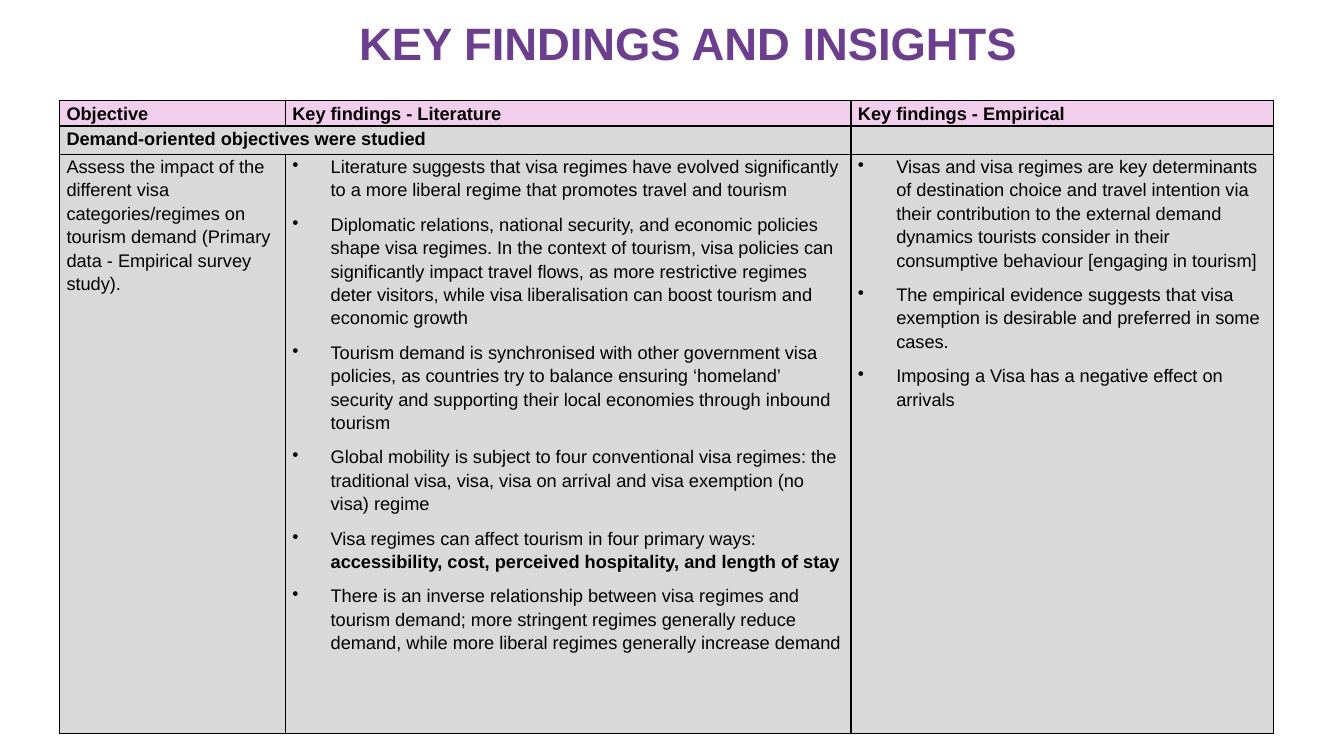
import dataclasses
import typing

import pptx
import pptx.dml.color
import pptx.enum.text
import pptx.oxml
import pptx.oxml.ns
import pptx.util

Inches = pptx.util.Inches
Pt = pptx.util.Pt


@dataclasses.dataclass(frozen=True)
class Theme:
    font: str = "Arial"
    title_color: str = "6C3D91"
    text_color: str = "000000"
    border_color: str = "000000"
    header_fill: str = "F2CEED"
    body_fill: str = "D9D9D9"
    title_size: float = 32.4
    table_size: float = 13
    border_width: float = 1


@dataclasses.dataclass(frozen=True)
class Span:
    text: str
    bold: bool = False


@dataclasses.dataclass(frozen=True)
class CellContent:
    paragraphs: tuple[tuple[Span, ...], ...] = ()
    fill: str = Theme.body_fill
    bulleted: bool = False


THEME = Theme()
COLUMN_WIDTHS = (2.24, 5.61, 4.19)
ROW_HEIGHTS = (0.24, 0.28, 5.75)
HANGING_INDENT = Inches(0.38)
CELL_FORMAT = {
    "margin_left": Inches(0.07),
    "margin_right": Inches(0.07),
    "margin_top": 0,
    "margin_bottom": 0,
}
PARAGRAPH_FORMAT = {"line_spacing": 1.15, "space_after": Pt(8)}


def heading(text: str, fill: str) -> CellContent:
    return CellContent(((Span(text, True),),), fill)


LITERATURE = (
    (Span("Literature suggests that visa regimes have evolved significantly to a more "
          "liberal regime that promotes travel and tourism"),),
    (Span("Diplomatic relations, national security, and economic policies shape visa "
          "regimes. In the context of tourism, visa policies can significantly impact "
          "travel flows, as more restrictive regimes deter visitors, while visa "
          "liberalisation can boost tourism and economic growth"),),
    (Span("Tourism demand is synchronised with other government visa policies, as "
          "countries try to balance ensuring ‘homeland’ security and supporting their "
          "local economies through inbound tourism"),),
    (Span("Global mobility is subject to four conventional visa regimes: the traditional "
          "visa, visa, visa on arrival and visa exemption (no visa) regime"),),
    (Span("Visa regimes can affect tourism in four primary ways: "),
     Span("accessibility, cost, perceived hospitality, and length of stay", True)),
    (Span("There is an inverse relationship between visa regimes and tourism demand; more "
          "stringent regimes generally reduce demand, while more liberal regimes "
          "generally increase demand"),),
)
EMPIRICAL = (
    (Span("Visas and visa regimes are key determinants of destination choice and travel "
          "intention via their contribution to the external demand dynamics tourists "
          "consider in their consumptive behaviour [engaging in tourism]"),),
    (Span("The empirical evidence suggests that visa exemption is desirable and preferred "
          "in some cases."),),
    (Span("Imposing a Visa has a negative effect on arrivals"),),
)
OBJECTIVE = (
    (Span("Assess the impact of the different visa categories/regimes on tourism demand "
          "(Primary data - Empirical survey study)."),),
)
ROWS = (
    tuple(heading(text, THEME.header_fill) for text in (
        "Objective", "Key findings - Literature", "Key findings - Empirical")),
    (heading("Demand-oriented objectives were studied", THEME.body_fill),
     CellContent(), CellContent()),
    (CellContent(OBJECTIVE), CellContent(LITERATURE, bulleted=True),
     CellContent(EMPIRICAL, bulleted=True)),
)


def apply_format(target: typing.Any, values: dict[str, typing.Any]) -> None:
    for name, value in values.items():
        setattr(target, name, value)


def add_span(para: typing.Any, span: Span, size: float, color: str) -> None:
    run = para.add_run()
    run.text = span.text
    apply_format(run.font, {"name": THEME.font, "size": Pt(size), "bold": span.bold})
    run.font.color.rgb = pptx.dml.color.RGBColor.from_string(color)


def add_bullet(para: typing.Any) -> None:
    properties = para._p.get_or_add_pPr()
    properties.set("marL", str(HANGING_INDENT))
    properties.set("indent", str(-HANGING_INDENT))
    bullet = pptx.oxml.parse_xml(
        f'<a:buChar {pptx.oxml.ns.nsdecls("a")} char="•"/>')
    properties.append(bullet)


def add_borders(cell: typing.Any) -> None:
    properties = cell._tc.get_or_add_tcPr()
    for side in ("lnL", "lnR", "lnT", "lnB"):
        properties.append(pptx.oxml.parse_xml(
            f'<a:{side} {pptx.oxml.ns.nsdecls("a")} w="{Pt(THEME.border_width)}">'
            f'<a:solidFill><a:srgbClr val="{THEME.border_color}"/></a:solidFill>'
            f'</a:{side}>'))


def fill_cell(cell: typing.Any, content: CellContent) -> None:
    apply_format(cell, CELL_FORMAT)
    add_borders(cell)
    cell.fill.solid()
    cell.fill.fore_color.rgb = pptx.dml.color.RGBColor.from_string(content.fill)
    frame = cell.text_frame
    if not content.paragraphs:
        frame.paragraphs[0]._p.append(pptx.oxml.parse_xml(
            f'<a:endParaRPr {pptx.oxml.ns.nsdecls("a")} '
            f'sz="{int(THEME.table_size * 100)}"/>'))
    for index, spans in enumerate(content.paragraphs):
        para = frame.add_paragraph() if index else frame.paragraphs[0]
        if content.bulleted:
            add_bullet(para)
        apply_format(para, PARAGRAPH_FORMAT)
        for span in spans:
            add_span(para, span, THEME.table_size, THEME.text_color)


def add_title(page: typing.Any, text: str) -> None:
    box = page.shapes.add_textbox(Inches(1.69), Inches(0.19), Inches(10.27), Inches(0.53))
    apply_format(box.text_frame, {
        "word_wrap": True,
        "vertical_anchor": pptx.enum.text.MSO_ANCHOR.MIDDLE,
    })
    para = box.text_frame.paragraphs[0]
    apply_format(para, {
        "alignment": pptx.enum.text.PP_ALIGN.CENTER,
        "line_spacing": 0.9,
    })
    add_span(para, Span(text, True), THEME.title_size, THEME.title_color)


def add_findings(page: typing.Any) -> None:
    table = page.shapes.add_table(
        len(ROWS), len(COLUMN_WIDTHS), Inches(0.59), Inches(1),
        Inches(sum(COLUMN_WIDTHS)), Inches(sum(ROW_HEIGHTS))).table
    apply_format(table, {"first_row": False, "horz_banding": False})
    for column, width in zip(table.columns, COLUMN_WIDTHS):
        column.width = Inches(width)
    for row, height in zip(table.rows, ROW_HEIGHTS):
        row.height = Inches(height)
    table.cell(1, 0).merge(table.cell(1, 1))
    for row, contents in zip(table.rows, ROWS):
        for cell, content in zip(row.cells, contents):
            fill_cell(cell, content)


def main() -> None:
    deck = pptx.Presentation()
    apply_format(deck, {"slide_width": Inches(13.33), "slide_height": Inches(7.5)})
    page = deck.slides.add_slide(deck.slide_layouts[6])
    add_title(page, "KEY FINDINGS AND INSIGHTS")
    add_findings(page)
    deck.save("out.pptx")


if __name__ == "__main__":
    main()
